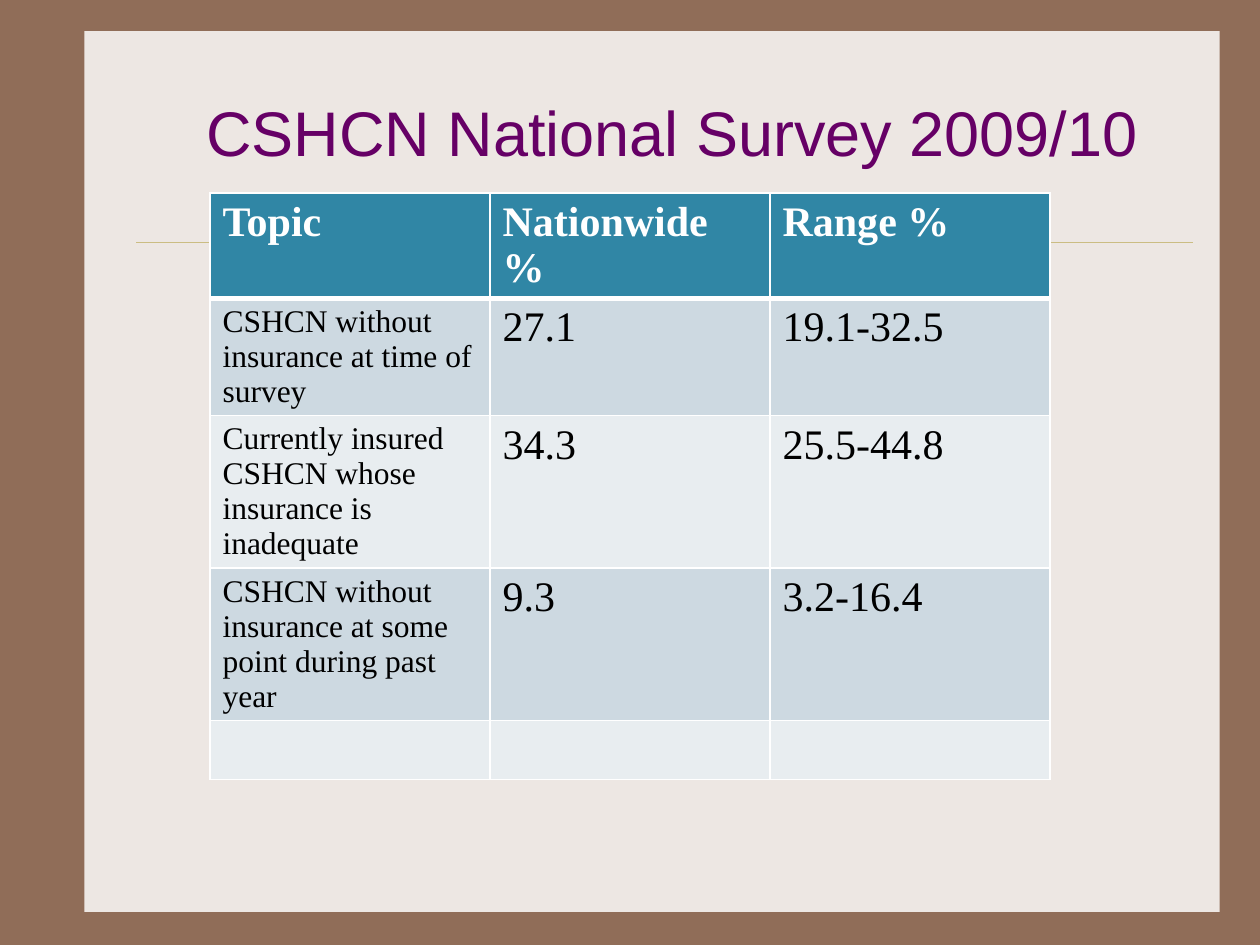
from dataclasses import dataclass
from lxml.etree import SubElement
from pptx import Presentation
from pptx.dml.color import RGBColor as Color
from pptx.enum.shapes import MSO_CONNECTOR as Connector, MSO_SHAPE as Shape
from pptx.enum.text import MSO_ANCHOR as Anchor, PP_ALIGN as Align
from pptx.oxml.ns import qn
from pptx.util import Inches, Pt

WIDTH, HEIGHT = Inches(10), Inches(7.5)


@dataclass(frozen=True)
class Theme:
    frame: str = "906D58"
    paper: str = "EDE7E3"
    rule: str = "CBBD83"
    title: str = "660066"
    header: str = "3086A5"
    bands: tuple = ("CDD9E1", "E8EDF0")
    white: str = "FFFFFF"
    black: str = "000000"
    title_font: str = "Arial"
    table_font: str = "Times New Roman"
    title_size: int = 36
    large: int = 24
    small: int = 18


THEME = Theme()
ROWS = [
    ("Topic", "Nationwide %", "Range %"),
    ("CSHCN without insurance at time of survey", "27.1", "19.1-32.5"),
    ("Currently insured CSHCN whose insurance is inadequate", "34.3", "25.5-44.8"),
    ("CSHCN without insurance at some point during past year", "9.3", "3.2-16.4"),
    ("", "", ""),
]
ROW_HEIGHTS = (0.83, 0.93, 1.21, 1.21, 0.47)


def across(share):
    return round(WIDTH * share)


def down(share):
    return round(HEIGHT * share)


def paint(fill, color):
    fill.solid()
    fill.fore_color.rgb = Color.from_string(color)


def write(frame, text, *, font, size, color, bold=False, align=Align.LEFT):
    para = frame.paragraphs[0]
    para.alignment = align
    span = para.add_run()
    span.text = text
    span.font.name, span.font.size, span.font.bold = font, Pt(size), bold
    span.font.color.rgb = Color.from_string(color)


def add_paper(page):
    paper = page.shapes.add_shape(
        Shape.RECTANGLE, across(0.067), down(0.033), across(0.901), down(0.932))
    paper.shadow.inherit = False
    paint(paper.fill, THEME.paper)
    paper.line.fill.background()


def add_rule(page):
    rule = page.shapes.add_connector(
        Connector.STRAIGHT, across(0.108), down(0.256), across(0.947), down(0.256))
    rule.line.width = Pt(0.25)
    rule.line.color.rgb = Color.from_string(THEME.rule)
    SubElement(rule.element.spPr, qn("a:effectLst"))


def add_title(page, text):
    box = page.shapes.add_textbox(
        Inches(1.17), Inches(0.42), Inches(8.33), Inches(1.25))
    box.text_frame.word_wrap = True
    box.text_frame.vertical_anchor = Anchor.MIDDLE
    write(box.text_frame, text, font=THEME.title_font, size=THEME.title_size,
          color=THEME.title, align=Align.CENTER)


def set_borders(cell, **widths):
    """Draw white borders; a border must come before the fill in the cell."""
    properties = cell._tc.get_or_add_tcPr()
    for side, width in widths.items():
        line = SubElement(properties, qn(f"a:ln{side}"), w=str(Pt(width)))
        solid = SubElement(line, qn("a:solidFill"))
        SubElement(solid, qn("a:srgbClr"), val=THEME.white)


def format_cell(cell, text, row, column):
    header = row == 0
    set_borders(cell, L=1, R=1, T=3 if row == 1 else 1, B=3 if header else 1)
    paint(cell.fill, THEME.header if header else THEME.bands[(row - 1) % 2])
    if text:
        topic = column == 0 and not header
        write(cell.text_frame, text, font=THEME.table_font, bold=header,
              size=THEME.small if topic else THEME.large,
              color=THEME.white if header else THEME.black)


def add_survey_table(page):
    table = page.shapes.add_table(
        len(ROWS), len(ROWS[0]), across(1 / 6), Inches(1.53),
        across(2 / 3), Inches(sum(ROW_HEIGHTS))).table
    for row, (texts, height) in enumerate(zip(ROWS, ROW_HEIGHTS)):
        table.rows[row].height = Inches(height)
        for column, text in enumerate(texts):
            format_cell(table.cell(row, column), text, row, column)


def main():
    deck = Presentation()
    deck.slide_width, deck.slide_height = WIDTH, HEIGHT
    page = deck.slides.add_slide(deck.slide_layouts[6])

    # Backdrop
    paint(page.background.fill, THEME.frame)
    add_paper(page)
    add_rule(page)

    # Content
    add_survey_table(page)
    add_title(page, "CSHCN National Survey 2009/10")
    deck.save("out.pptx")


if __name__ == "__main__":
    main()
